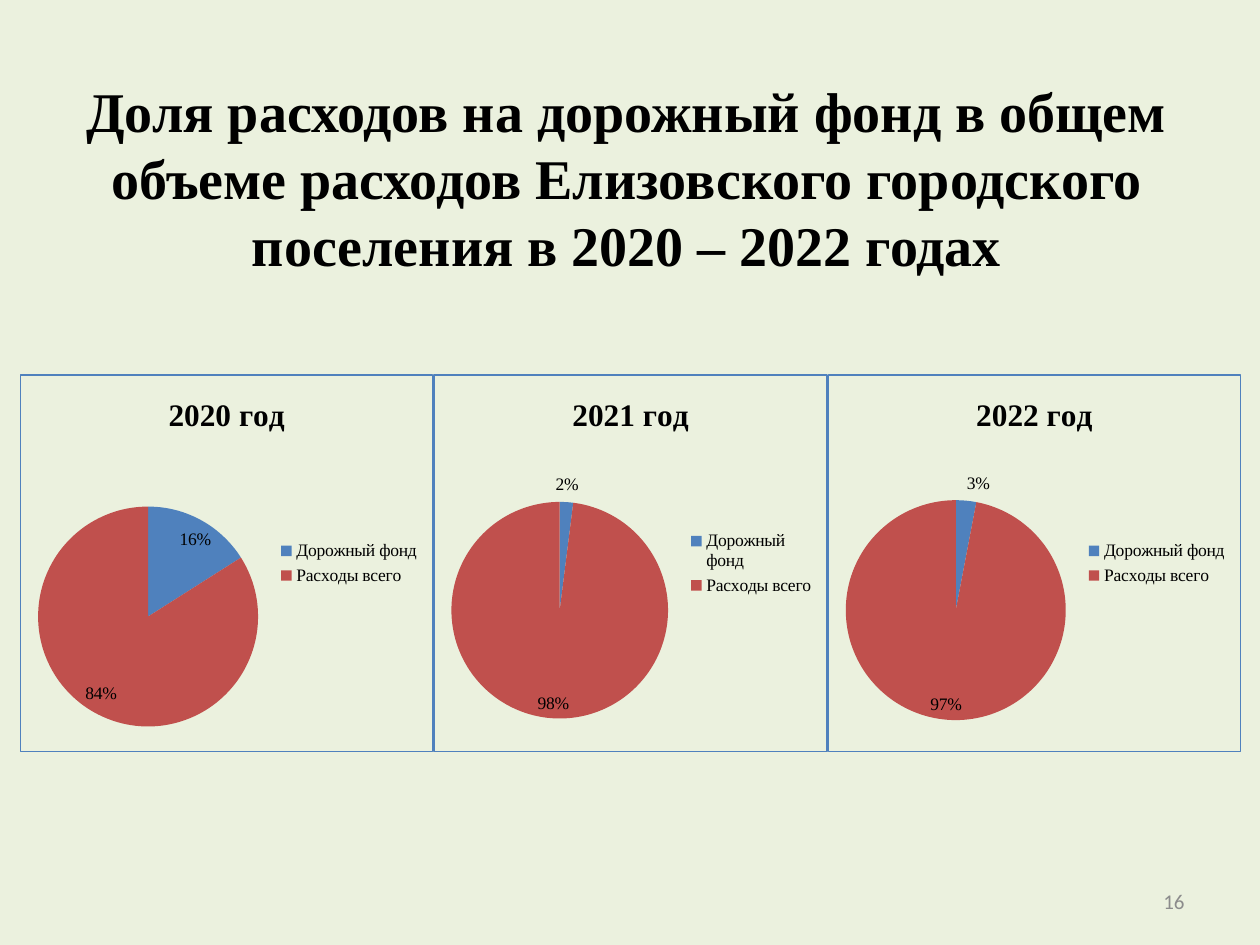
from lxml import etree
from pptx import Presentation
from pptx.chart.data import CategoryChartData
from pptx.dml.color import RGBColor
from pptx.enum.chart import XL_CHART_TYPE, XL_LABEL_POSITION, XL_LEGEND_POSITION
from pptx.enum.text import MSO_ANCHOR, PP_ALIGN
from pptx.oxml import parse_xml
from pptx.util import Inches, Pt

PIE = XL_CHART_TYPE.PIE
BEST = XL_LABEL_POSITION.BEST_FIT
RIGHT = XL_LEGEND_POSITION.RIGHT
MID = MSO_ANCHOR.MIDDLE
SERIF = "Times New Roman"

TITLE = ("Доля расходов на дорожный фонд в общем объеме расходов "
         "Елизовского городского поселения в 2020 – 2022 годах")
PAGE = "16"
CATS = ["Дорожный фонд", "Расходы всего"]
FILLS = ["4F81BD", "C0504D"]
YEARS = [
    ("2020 год", 3.28, (16, 84)),
    ("2021 год", 3.13, (2, 98)),
    ("2022 год", 3.28, (3, 97)),
]
LEFT, TOP, HIGH = 0.16, 2.97, 3
BORDER = (
    '<c:spPr xmlns:c="http://schemas.openxmlformats.org/drawingml/2006/chart" '
    'xmlns:a="http://schemas.openxmlformats.org/drawingml/2006/main">'
    '<a:noFill/><a:ln w="9525"><a:solidFill><a:srgbClr val="4F81BD"/>'
    '</a:solidFill></a:ln></c:spPr>'
)


def color(code):
    return RGBColor.from_string(code)


def style(font, size, name=SERIF, fill="000000", bold=False):
    font.size, font.name, font.bold = Pt(size), name, bold
    font.color.rgb = color(fill)


def write(frame, text, align=PP_ALIGN.CENTER, **form):
    para = frame.paragraphs[0]
    para.alignment = align
    run = para.add_run()
    run.text = text
    style(run.font, **form)


def place(shape, left, top, width, height):
    shape.left, shape.top = Inches(left), Inches(top)
    shape.width, shape.height = Inches(width), Inches(height)


def add_pie(slide, year, vals, left, width):
    data = CategoryChartData()
    data.categories = CATS
    data.add_series(year, vals)
    box = [Inches(n) for n in (left, TOP, width, HIGH)]
    chart = slide.shapes.add_chart(PIE, *box, data).chart
    style(chart.font, 10)
    chart.has_title = True
    write(chart.chart_title.text_frame, year, size=18, bold=True)
    chart.chart_title.include_in_layout = False
    chart.has_legend = True
    chart.legend.position = RIGHT
    chart.legend.include_in_layout = False
    plot = chart.plots[0]
    plot.vary_by_categories = True
    for i, code in enumerate(FILLS):
        fill = plot.series[0].points[i].format.fill
        fill.solid()
        fill.fore_color.rgb = color(code)
    plot.has_data_labels = True
    labels = plot.data_labels
    labels.show_percentage, labels.show_value = True, False
    labels.number_format, labels.number_format_is_linked = "0%", False
    labels.position = BEST
    style(labels.font, 10)
    body = next(e for e in chart.element if etree.QName(e).localname == "chart")
    body.addnext(parse_xml(BORDER))


def main():
    deck = Presentation()
    deck.slide_width, deck.slide_height = Inches(10), Inches(7.5)
    slide = deck.slides.add_slide(deck.slide_layouts[5])
    back = slide.background.fill
    back.solid()
    back.fore_color.rgb = color("EBF1DE")

    title = slide.shapes.title
    place(title, 0.31, 0.39, 9.33, 2.03)
    title.text_frame.vertical_anchor = MID
    write(title.text_frame, TITLE, size=32, bold=True)

    left = LEFT
    for year, width, vals in YEARS:
        add_pie(slide, year, vals, left, width)
        left += width

    page = slide.shapes.add_textbox(0, 0, 0, 0)
    place(page, 7.17, 6.95, 2.33, 0.4)
    page.text_frame.word_wrap = True
    page.text_frame.vertical_anchor = MID
    write(page.text_frame, PAGE, align=PP_ALIGN.RIGHT, size=12,
          name="Calibri", fill="8C8C8C")
    deck.save("out.pptx")


if __name__ == "__main__":
    main()
